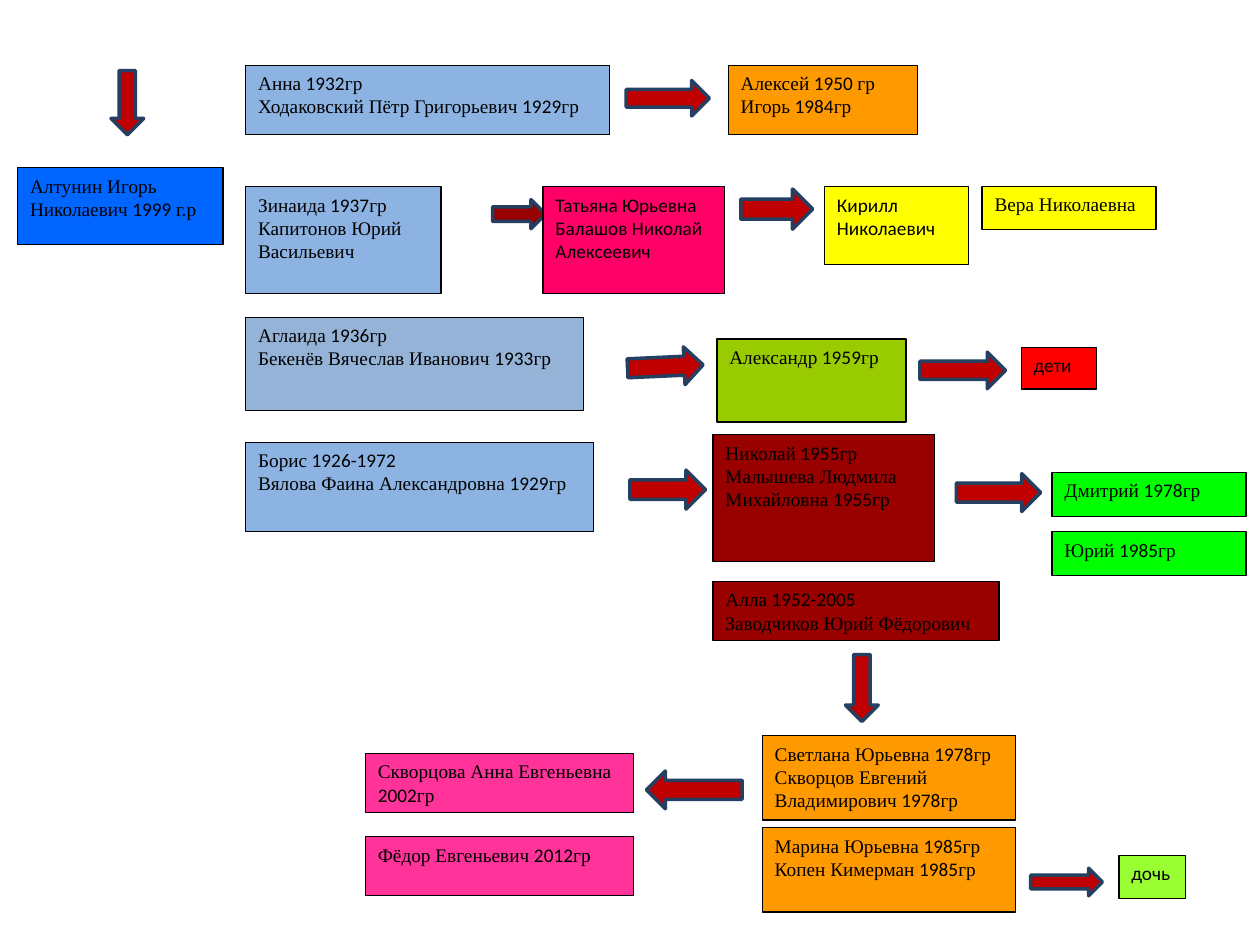
from pptx import Presentation
from pptx.dml.color import RGBColor
from pptx.enum.shapes import MSO_SHAPE
from pptx.enum.text import MSO_ANCHOR, PP_ALIGN
from pptx.util import Pt

RECT = MSO_SHAPE.RECTANGLE
DOWN = MSO_SHAPE.DOWN_ARROW
RIGHT = MSO_SHAPE.RIGHT_ARROW
LEFT = MSO_SHAPE.LEFT_ARROW
TOP = MSO_ANCHOR.TOP
START = PP_ALIGN.LEFT

BLACK = RGBColor(0x00, 0x00, 0x00)
NAVY = RGBColor(0x24, 0x3F, 0x60)
BLUE = RGBColor(0x00, 0x66, 0xFF)
SKY = RGBColor(0x8D, 0xB3, 0xE2)
STEEL = RGBColor(0x95, 0xB3, 0xD7)
ORANGE = RGBColor(0xFF, 0x99, 0x00)
OLIVE = RGBColor(0x99, 0xCC, 0x00)
RED = RGBColor(0xFF, 0x00, 0x00)
CRIMSON = RGBColor(0xC0, 0x00, 0x00)
MAROON = RGBColor(0x99, 0x00, 0x00)
ROSE = RGBColor(0xFF, 0x00, 0x66)
YELLOW = RGBColor(0xFF, 0xFF, 0x00)
GREEN = RGBColor(0x00, 0xFF, 0x00)
PINK = RGBColor(0xFF, 0x33, 0x99)
LIME = RGBColor(0x99, 0xFF, 0x33)

FONTS = ("Times New Roman", "Calibri")
SIZE = 11

# Each "|" switches between the two fonts.
PEOPLE = [
    (10.1, 95.8, 117.4, 43.9, BLUE, ["Алтунин Игорь Николаевич| 1999 |г.р"]),
    (140.4, 37.4, 208.1, 39.6, SKY,
     ["Анна| 1932|гр", "Ходаковский Пётр Григорьевич| 1929|гр"]),
    (140.4, 106.6, 111.6, 61.2, SKY,
     ["Зинаида| 1937|гр", "Капитонов Юрий Васильевич"]),
    (140.4, 181.4, 193, 53.3, STEEL,
     ["Аглаида| 1936|гр", "Бекенёв Вячеслав Иванович| 1933|гр"]),
    (140.4, 252.7, 198.7, 51.1, SKY,
     ["Борис| 1926-1972", "Вялова Фаина Александровна| 1929|гр"]),
    (416.2, 37.4, 108, 39.6, ORANGE,
     ["Алексей| 1950 |гр", "Игорь| 1984|гр"]),
    (310.3, 106.6, 103.7, 61.2, ROSE,
     ["|Татьяна Юрьевна", "|Балашов Николай Алексеевич"]),
    (471.2, 106.6, 82.1, 44.6, YELLOW, ["|Кирилл Николаевич"]),
    (561.2, 106.6, 99.4, 24.5, YELLOW, ["Вера Николаевна"]),
    (409.7, 193.7, 108, 47.5, OLIVE, ["Александр| 1959|гр"]),
    (583.6, 198.6, 43.2, 23.8, RED, ["|дети"]),
    (407.5, 248.4, 126.7, 72.4, MAROON,
     ["Николай| 1955|гр", "Малышева Людмила Михайловна| 1955|гр"]),
    (407.5, 332.3, 163.4, 33.8, MAROON,
     ["Алла| 1952-2005", "Заводчиков Юрий Фёдорович"]),
    (601.2, 270, 110.9, 25.2, GREEN, ["Дмитрий| 1978|гр"]),
    (601.2, 303.8, 110.9, 25.2, GREEN, ["Юрий| 1985|гр"]),
    (435.6, 420.5, 144.7, 48.2, ORANGE,
     ["Светлана Юрьевна| 1978|гр", "Скворцов Евгений Владимирович| 1978|гр"]),
    (435.6, 473, 144.7, 48.2, ORANGE,
     ["Марина Юрьевна| 1985|гр", "Копен Кимерман| 1985|гр"]),
    (208.8, 430.6, 153.4, 33.8, PINK, ["Скворцова Анна Евгеньевна| 2002|гр"]),
    (208.8, 478.1, 153.4, 33.8, PINK, ["Фёдор Евгеньевич| 2012|гр"]),
    (639.4, 488.9, 38.2, 24.5, LIME, ["|дочь"]),
]

ARROWS = [
    (DOWN, 63.4, 40.3, 18.7, 36.7, 0, CRIMSON),
    (DOWN, 371.5, 32.4, 20.2, 47.5, 270, CRIMSON),
    (RIGHT, 281.5, 114.1, 30.2, 16.6, 0, MAROON),
    (RIGHT, 423.4, 108, 41, 23, 0, CRIMSON),
    (RIGHT, 358.6, 198.7, 43.2, 21.6, 357.4, CRIMSON),
    (RIGHT, 525.6, 201.2, 49, 20.9, 0, CRIMSON),
    (RIGHT, 360, 268.6, 43.2, 22.3, 0, CRIMSON),
    (RIGHT, 546.5, 270.7, 48.2, 21.6, 0, CRIMSON),
    (RIGHT, 473.4, 383.8, 38.2, 18.7, 90, CRIMSON),
    (LEFT, 369.4, 440.6, 54.7, 21.6, 0, CRIMSON),
    (RIGHT, 589, 496.1, 41, 15.8, 0, CRIMSON),
]


def draw(slide, kind, area, fill, edge, width):
    shape = slide.shapes.add_shape(kind, *map(Pt, area))
    shape.shadow.inherit = False
    shape.fill.solid()
    shape.fill.fore_color.rgb = fill
    shape.line.color.rgb = edge
    shape.line.width = Pt(width)
    return shape


def write(shape, lines):
    frame = shape.text_frame
    frame.word_wrap = True
    frame.vertical_anchor = TOP
    for i, line in enumerate(lines):
        para = frame.add_paragraph() if i else frame.paragraphs[0]
        para.alignment = START
        para.font.size = Pt(SIZE)
        para.font.color.rgb = BLACK
        for j, part in enumerate(line.split("|")):
            if part:
                run = para.add_run()
                run.text = part
                run.font.name = FONTS[j % 2]


def main():
    deck = Presentation()
    deck.slide_width, deck.slide_height = Pt(720), Pt(540)
    slide = deck.slides.add_slide(deck.slide_layouts[6])
    for kind, *area, turn, fill in ARROWS:
        draw(slide, kind, area, fill, NAVY, 2).rotation = turn
    for *area, fill, lines in PEOPLE:
        write(draw(slide, RECT, area, fill, BLACK, 0.75), lines)
    deck.save("out.pptx")


if __name__ == "__main__":
    main()
